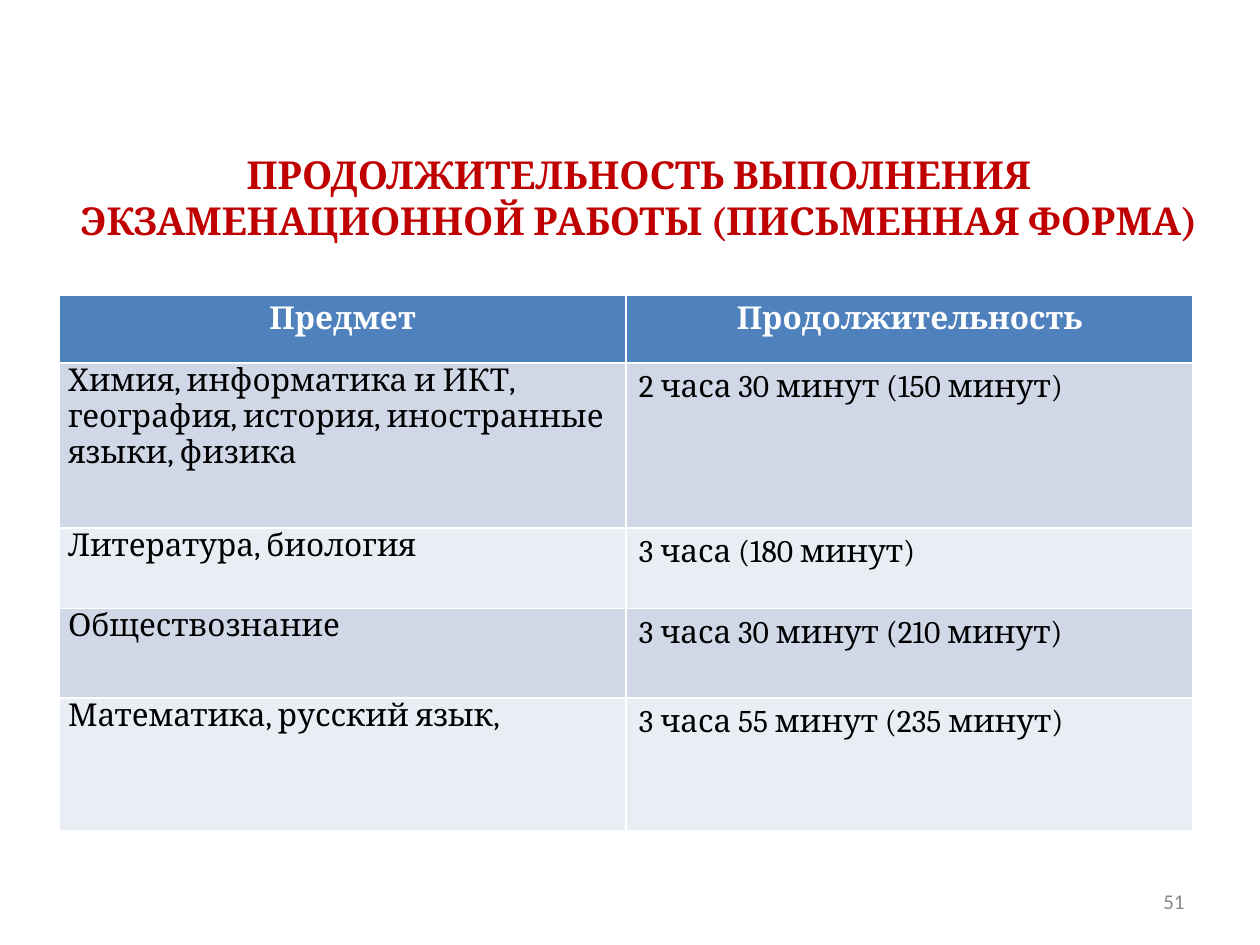
from pptx import Presentation
from pptx.dml.color import RGBColor
from pptx.enum.text import MSO_ANCHOR, PP_ALIGN
from pptx.util import Inches, Pt


def rgb(color):
    return RGBColor.from_string(color)


def put_text(tf, text, size=18, font="Cambria", color="000000", bold=False,
             align=PP_ALIGN.LEFT):
    tf.word_wrap = True
    p = tf.paragraphs[0]
    p.alignment = align
    r = p.add_run()
    r.text = text
    r.font.size = Pt(size)
    r.font.name = font
    r.font.bold = bold
    r.font.color.rgb = rgb(color)


prs = Presentation()
prs.slide_width = Inches(10)
prs.slide_height = Inches(7.5)
s = prs.slides.add_slide(prs.slide_layouts[5])

title = s.shapes.title
title.left, title.top = Inches(0.47), Inches(0.94)
title.width, title.height = Inches(9.2), Inches(1.25)
title.text_frame.vertical_anchor = MSO_ANCHOR.MIDDLE
put_text(title.text_frame,
         "ПРОДОЛЖИТЕЛЬНОСТЬ ВЫПОЛНЕНИЯ ЭКЗАМЕНАЦИОННОЙ РАБОТЫ (ПИСЬМЕННАЯ ФОРМА)",
         size=22, color="C00000", bold=True, align=PP_ALIGN.CENTER)

rows = [
    ("Предмет", "Продолжительность"),
    ("Химия, информатика и ИКТ, география, история, иностранные языки, физика",
     "2 часа 30 минут (150 минут)"),
    ("Литература, биология", "3 часа (180 минут)"),
    ("Обществознание", "3 часа 30 минут (210 минут)"),
    ("Математика, русский язык,", "3 часа 55 минут (235 минут)"),
]
heights = [0.54, 1.31, 0.64, 0.71, 1.05]
table = s.shapes.add_table(len(rows), 2, Inches(0.47), Inches(2.34),
                           Inches(9), Inches(sum(heights))).table
for i, (row, height) in enumerate(zip(rows, heights)):
    table.rows[i].height = Inches(height)
    header = i == 0
    fill = "4F81BD" if header else ("E9EDF4", "D0D8E8")[i % 2]
    for j, text in enumerate(row):
        cell = table.cell(i, j)
        cell.fill.solid()
        cell.fill.fore_color.rgb = rgb(fill)
        if j == 0 and not header:
            cell.margin_left = cell.margin_right = Inches(0.07)
            cell.margin_top = cell.margin_bottom = Inches(0)
        put_text(cell.text_frame, text, bold=header,
                 color="FFFFFF" if header else "000000",
                 align=PP_ALIGN.CENTER if header else PP_ALIGN.LEFT)

number = s.shapes.add_textbox(Inches(7.17), Inches(6.95), Inches(2.33), Inches(0.4))
number.text_frame.vertical_anchor = MSO_ANCHOR.MIDDLE
put_text(number.text_frame, "51", size=12, font="Calibri", color="898989",
         align=PP_ALIGN.RIGHT)

prs.save("out.pptx")
